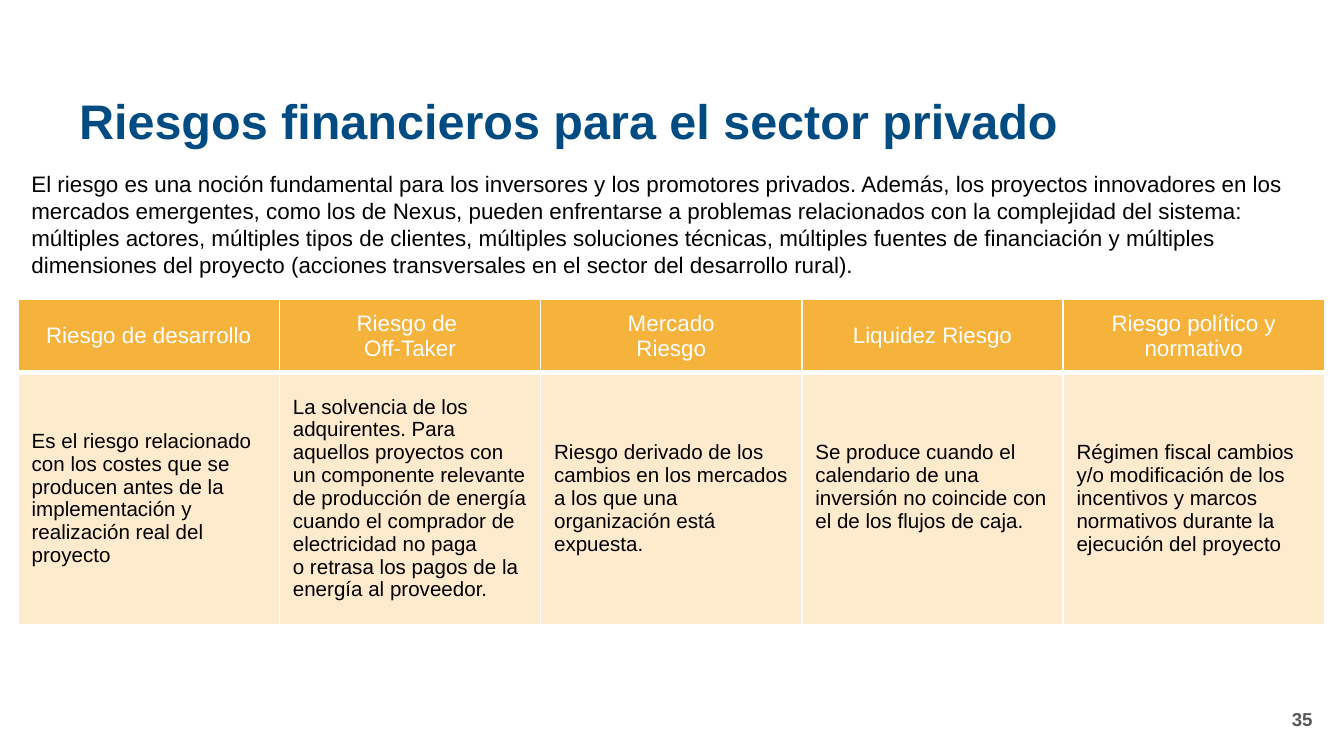
from lxml.etree import SubElement
from pptx import Presentation
from pptx.dml.color import RGBColor as Rgb
from pptx.enum.text import MSO_ANCHOR as Anchor, MSO_AUTO_SIZE as Auto, PP_ALIGN as Align
from pptx.oxml.ns import qn
from pptx.util import Pt

PX = 9525
HUES = {"title": "004C82", "page": "575756", "text": "000000",
        "white": "FFFFFF", "head": "F6B33C", "body": "FEEACC"}
TITLE = "Riesgos financieros para el sector privado"
INTRO = ("El riesgo es una noción fundamental para los inversores y los promotores privados. "
         "Además, los proyectos innovadores en los mercados emergentes, como los de Nexus, "
         "pueden enfrentarse a problemas relacionados con la complejidad del sistema: "
         "múltiples actores, múltiples tipos de clientes, múltiples soluciones técnicas, "
         "múltiples fuentes de financiación y múltiples dimensiones del proyecto "
         "(acciones transversales en el sector del desarrollo rural).")
RISKS = [
    ("Riesgo de desarrollo",
     "Es el riesgo relacionado con los costes que se producen antes de la "
     "implementación y realización real del proyecto"),
    ("Riesgo de \nOff-Taker",
     "La solvencia de los adquirentes. Para aquellos proyectos con un componente "
     "relevante de producción de energía cuando el comprador de electricidad no paga\n"
     "o retrasa los pagos de la energía al proveedor."),
    ("Mercado\nRiesgo",
     "Riesgo derivado de los cambios en los mercados a los que una organización "
     "está expuesta."),
    ("Liquidez Riesgo",
     "Se produce cuando el calendario de una inversión no coincide con el de los "
     "flujos de caja."),
    ("Riesgo político y normativo",
     "Régimen fiscal cambios y/o modificación de los incentivos y marcos normativos "
     "durante la ejecución del proyecto"),
]


def style(frame, hue, font, para):
    """Apply font and paragraph values to all text in a frame."""
    for par in frame.paragraphs:
        for key, val in para.items():
            setattr(par, key, val)
        for run in par.runs:
            run.font.color.rgb = Rgb.from_string(HUES[hue])
            for key, val in {"name": "Arial", **font}.items():
                setattr(run.font, key, val)


def label(slide, box, text, hue, font, para, anchor=Anchor.MIDDLE, auto=Auto.NONE):
    """Place a wrapped text box in the given box."""
    frame = slide.shapes.add_textbox(*(n * PX for n in box)).text_frame
    form = {"word_wrap": True, "vertical_anchor": anchor, "auto_size": auto, "text": text}
    for key, val in form.items():
        setattr(frame, key, val)
    style(frame, hue, font, para)


def edge(cell, widths):
    """Draw white borders on a cell, with a width in points per side."""
    props = cell._tc.get_or_add_tcPr()
    for spot, (side, width) in enumerate(widths.items()):
        line = props.makeelement(qn("a:ln" + side), {"w": str(Pt(width))})
        fill = SubElement(line, qn("a:solidFill"))
        SubElement(fill, qn("a:srgbClr"), val=HUES["white"])
        props.insert(spot, line)


def grid(slide, box, rows):
    """Place the risk table, with one column per risk."""
    left, top, width, height = (n * PX for n in box)
    table = slide.shapes.add_table(2, len(RISKS), left, top, width, height).table
    looks = [("head", "white", 12, Align.CENTER, 3), ("body", "text", 11, Align.LEFT, 1)]
    for row, (tall, look) in enumerate(zip(rows, looks)):
        fill, hue, size, align, base = look
        table.rows[row].height = tall * PX
        for col, risk in enumerate(RISKS):
            cell = table.cell(row, col)
            cell.text = risk[row]
            cell.vertical_anchor = Anchor.MIDDLE
            cell.fill.solid()
            cell.fill.fore_color.rgb = Rgb.from_string(HUES[fill])
            style(cell.text_frame, hue, {"size": Pt(size), "bold": False},
                  {"alignment": align})
            edge(cell, {"L": 1, "R": 1, "T": 1 if row == 0 else 3, "B": base})
    table.cell(1, 3).margin_bottom = 21 * PX


def main():
    """Build and save the slide."""
    deck = Presentation()
    deck.slide_width, deck.slide_height = 960 * PX, 540 * PX
    slide = deck.slides.add_slide(deck.slide_layouts[6])
    label(slide, (47, 60, 900, 57), TITLE, "title",
          {"size": Pt(26), "bold": True}, {"line_spacing": 0.9})
    label(slide, (731, 499, 216, 29), "35", "page",
          {"size": Pt(10), "bold": True}, {"alignment": Align.RIGHT})
    grid(slide, (13, 214, 933, 232), (52, 180))
    label(slide, (13, 117, 933, 87), INTRO, "text",
          {"size": Pt(12)}, {}, Anchor.TOP, Auto.SHAPE_TO_FIT_TEXT)
    deck.save("out.pptx")


if __name__ == "__main__":
    main()
